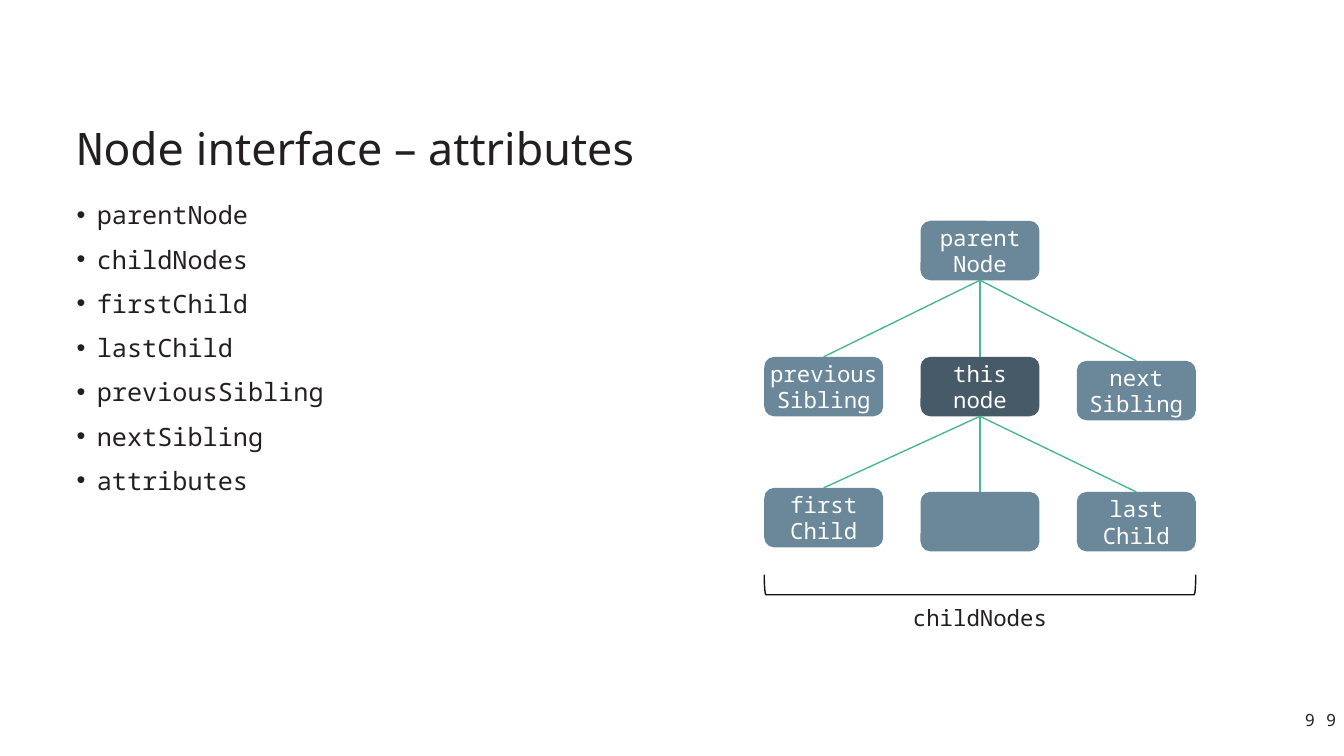
from dataclasses import dataclass

from lxml.etree import SubElement
from pptx import Presentation
from pptx.dml.color import RGBColor
from pptx.enum.shapes import MSO_CONNECTOR, MSO_SHAPE
from pptx.enum.text import MSO_ANCHOR, PP_ALIGN
from pptx.oxml.ns import qn
from pptx.shapes.autoshape import Shape
from pptx.slide import Slide
from pptx.text.text import Font, TextFrame, _Paragraph
from pptx.util import Inches, Pt


@dataclass(frozen=True)
class Theme:
    sans: str = "Noto Sans"
    mono: str = "Noto Sans Mono"
    ink: str = "231F20"
    white: str = "FFFFFF"
    node: str = "6B879A"
    current: str = "475A67"
    edge: str = "4BB693"
    bracket: str = "121010"
    title_size: int = 32
    body_size: int = 18
    node_size: int = 16
    number_size: int = 12


@dataclass(frozen=True)
class TreeNode:
    label: str
    center: float
    top: float
    fill: str

    @property
    def bottom(self) -> float:
        return self.top + NODE_HEIGHT


THEME = Theme()
NODE_WIDTH, NODE_HEIGHT = 1.18, 0.59
LEFT, MIDDLE, RIGHT = (9.72 + step * 1.55 for step in (-1, 0, 1))

PARENT = TreeNode("parent\vNode", MIDDLE, 2.19, THEME.node)
THIS_NODE = TreeNode("this\nnode", MIDDLE, 3.54, THEME.current)
SIBLINGS = [
    TreeNode("previous\vSibling", LEFT, 3.54, THEME.node),
    THIS_NODE,
    TreeNode("next\vSibling", RIGHT, 3.58, THEME.node),
]
CHILDREN = [
    TreeNode("first\vChild", LEFT, 4.84, THEME.node),
    TreeNode("", MIDDLE, 4.88, THEME.node),
    TreeNode("last\vChild", RIGHT, 4.88, THEME.node),
]
ATTRIBUTES = [
    "parentNode", "childNodes", "firstChild", "lastChild",
    "previousSibling", "nextSibling", "attributes",
]


def set_font(font: Font, name: str, size: int, color: str = THEME.ink) -> None:
    font.name = name
    font.size = Pt(size)
    font.color.rgb = RGBColor.from_string(color)


def set_margins(frame: TextFrame, side: float, end: float) -> None:
    frame.margin_left = frame.margin_right = Inches(side)
    frame.margin_top = frame.margin_bottom = Inches(end)


def place(shape: Shape, left: float, top: float, width: float, height: float) -> None:
    shape.left, shape.top = Inches(left), Inches(top)
    shape.width, shape.height = Inches(width), Inches(height)


def add_box(page: Slide, left: float, top: float, width: float, height: float,
            end_margin: float = 0.04) -> TextFrame:
    box = page.shapes.add_textbox(Inches(left), Inches(top), Inches(width), Inches(height))
    box.text_frame.word_wrap = True
    set_margins(box.text_frame, 0.08, end_margin)
    return box.text_frame


def add_bullet(para: _Paragraph, indent: float) -> None:
    properties = para._p.get_or_add_pPr()
    properties.set("marL", str(Inches(indent)))
    properties.set("indent", str(-Inches(indent)))
    SubElement(properties, qn("a:buFont")).set("typeface", "Arial")
    SubElement(properties, qn("a:buChar")).set("char", "•")


def add_title(page: Slide) -> None:
    title = page.shapes.title
    place(title, 0.68, 0.76, 11.97, 1.02)
    frame = title.text_frame
    frame.vertical_anchor = MSO_ANCHOR.BOTTOM
    set_margins(frame, 0.08, 0.04)
    para = frame.paragraphs[0]
    para.alignment = PP_ALIGN.LEFT
    para.line_spacing = 0.9
    for text, font_name in (("Node", THEME.mono), (" interface – attributes", THEME.sans)):
        span = para.add_run()
        span.text = text
        set_font(span.font, font_name, THEME.title_size)


def add_attribute_list(page: Slide) -> None:
    frame = add_box(page, 0.68, 1.94, 5.91, 4.88)
    frame.text = "\n".join(ATTRIBUTES)
    for index, para in enumerate(frame.paragraphs):
        if index:
            para.space_before = Pt(10)
        add_bullet(para, 0.2)
        set_font(para.font, THEME.mono, THEME.body_size)


def add_node(page: Slide, node: TreeNode) -> None:
    shape = page.shapes.add_shape(
        MSO_SHAPE.ROUNDED_RECTANGLE, Inches(node.center - NODE_WIDTH / 2),
        Inches(node.top), Inches(NODE_WIDTH), Inches(NODE_HEIGHT))
    shape.shadow.inherit = False
    shape.fill.solid()
    shape.fill.fore_color.rgb = RGBColor.from_string(node.fill)
    shape.line.fill.background()
    frame = shape.text_frame
    frame.word_wrap = False
    frame.vertical_anchor = MSO_ANCHOR.MIDDLE
    set_margins(frame, 0, 0)
    frame.text = node.label
    for para in frame.paragraphs:
        para.alignment = PP_ALIGN.CENTER
        set_font(para.font, THEME.mono, THEME.node_size, THEME.white)


def add_edge(page: Slide, upper: TreeNode, lower: TreeNode) -> None:
    edge = page.shapes.add_connector(
        MSO_CONNECTOR.STRAIGHT, Inches(lower.center), Inches(lower.top),
        Inches(upper.center), Inches(upper.bottom))
    edge.line.color.rgb = RGBColor.from_string(THEME.edge)
    edge.line.width = Pt(1)
    SubElement(edge._element.spPr, qn("a:effectLst"))


def add_child_bracket(page: Slide) -> None:
    """Draw the bracket under the children, with its label."""
    depth, span = 0.2, RIGHT - LEFT + NODE_WIDTH
    bracket = page.shapes.add_shape(
        MSO_SHAPE.LEFT_BRACKET, Inches(MIDDLE - depth / 2),
        Inches(5.8 - span / 2), Inches(depth), Inches(span))
    bracket.rotation = 270
    bracket.shadow.inherit = False
    bracket.fill.background()
    bracket.line.color.rgb = RGBColor.from_string(THEME.bracket)
    bracket.line.width = Pt(1)

    frame = add_box(page, MIDDLE - 0.78, 5.95, 1.56, 0.37)
    frame.word_wrap = False
    para = frame.paragraphs[0]
    para.text = "childNodes"
    para.alignment = PP_ALIGN.CENTER
    set_font(para.font, THEME.mono, THEME.node_size)


def add_page_number(page: Slide, left: float) -> None:
    para = add_box(page, left, 6.98, 0.47, 0.31, end_margin=0.06).paragraphs[0]
    para.text = "9"
    para.alignment = PP_ALIGN.RIGHT
    set_font(para.font, THEME.sans, THEME.number_size)


def main() -> None:
    deck = Presentation()
    deck.slide_width, deck.slide_height = Inches(13.33), Inches(7.5)
    page = deck.slides.add_slide(deck.slide_layouts.get_by_name("Title Only"))
    add_title(page)
    add_attribute_list(page)
    for left in (12.65, 12.86):
        add_page_number(page, left)
    for node in [PARENT, *SIBLINGS, *CHILDREN]:
        add_node(page, node)
    for upper, row in ((PARENT, SIBLINGS), (THIS_NODE, CHILDREN)):
        for lower in row:
            add_edge(page, upper, lower)
    add_child_bracket(page)
    deck.save("out.pptx")


if __name__ == "__main__":
    main()
